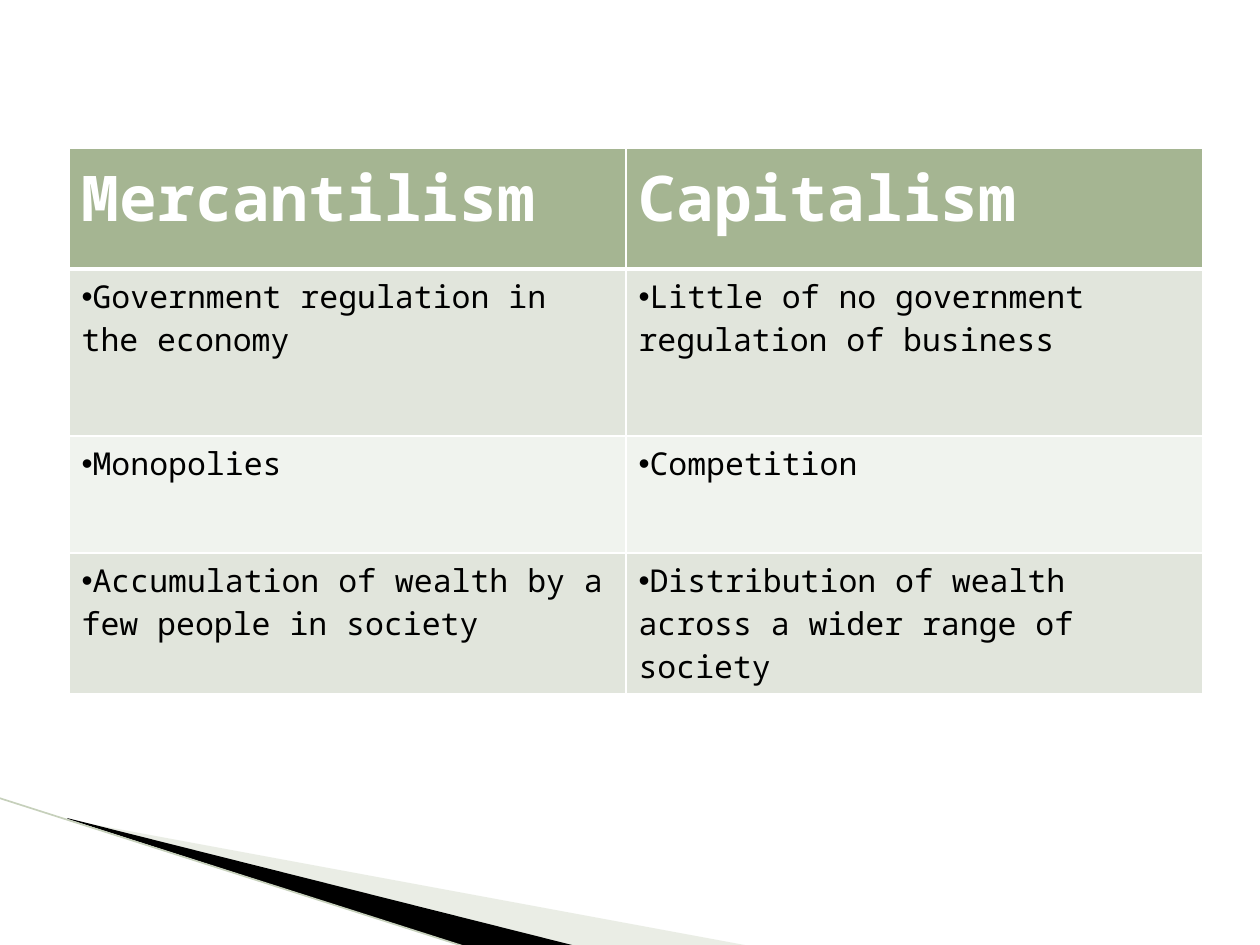
"""Build a slide comparing mercantilism with capitalism in a table."""

from dataclasses import dataclass

from lxml.etree import SubElement
from pptx import Presentation
from pptx.dml.color import RGBColor
from pptx.enum.shapes import MSO_CONNECTOR
from pptx.oxml.ns import qn
from pptx.util import Emu, Pt

EMU_PER_PX = 914400 / 126
FONT = "Noto Sans Mono"
WHITE = RGBColor(0xFF, 0xFF, 0xFF)
BLACK = RGBColor(0x00, 0x00, 0x00)
SAGE = RGBColor(0xA5, 0xB5, 0x92)
DARK_BAND = RGBColor(0xE1, 0xE5, 0xDC)
LIGHT_BAND = RGBColor(0xF0, 0xF3, 0xEE)
PALE_WEDGE = RGBColor(0xCB, 0xD4, 0xC0)
EDGE = RGBColor(0xC6, 0xD0, 0xBB)


@dataclass(frozen=True)
class Wedge:
    points: tuple[tuple[int, int], ...]
    color: RGBColor
    opacity: int = 100


@dataclass(frozen=True)
class Row:
    texts: tuple[str, str]
    height: int
    fill: RGBColor
    is_header: bool = False
    top_border: int = 1
    bottom_border: int = 1


WEDGES = (
    Wedge(((69, 820), (750, 946), (575, 946), (69, 819)), PALE_WEDGE, 40),
    Wedge(((67, 818), (576, 946), (469, 948), (68, 819)), BLACK),
)
COLUMN_WIDTHS = (557, 577)
ROWS = (
    Row(("Mercantilism", "Capitalism"), 121, SAGE, is_header=True, bottom_border=3),
    Row(("Government regulation in the economy",
         "Little of no government regulation of business"), 167, DARK_BAND, top_border=3),
    Row(("Monopolies", "Competition"), 117, LIGHT_BAND),
    Row(("Accumulation of wealth by a few people in society",
         "Distribution of wealth across a wider range of society"), 117, DARK_BAND),
)


def px(length: int) -> Emu:
    """Convert whole pixels to EMU."""
    return Emu(round(length * EMU_PER_PX))


def draw_wedge(slide, wedge: Wedge) -> None:
    """Draw one filled wedge of the corner decoration."""
    start, *rest = wedge.points
    builder = slide.shapes.build_freeform(*start, scale=EMU_PER_PX)
    builder.add_line_segments(rest, close=True)
    outline = builder.convert_to_shape()
    outline.shadow.inherit = False
    outline.line.fill.background()
    outline.fill.solid()
    outline.fill.fore_color.rgb = wedge.color
    if wedge.opacity < 100:
        color = outline.fill._xPr.find(qn("a:solidFill"))[0]
        SubElement(color, qn("a:alpha"), val=str(wedge.opacity * 1000))


def draw_edge(slide) -> None:
    """Draw the thin line along the wedges."""
    edge = slide.shapes.add_connector(
        MSO_CONNECTOR.STRAIGHT, px(-1), px(798), px(469), px(948))
    edge.line.color.rgb = EDGE
    edge.line.width = Pt(0.95)
    SubElement(edge._element.spPr, qn("a:effectLst"))


def set_borders(cell, row: Row) -> None:
    """Give a cell white borders on its four sides."""
    properties = cell._tc.get_or_add_tcPr()
    widths = {"L": 1, "R": 1, "T": row.top_border, "B": row.bottom_border}
    for side, width in widths.items():
        border = SubElement(properties, qn(f"a:ln{side}"), w=str(Pt(width)))
        fill = SubElement(border, qn("a:solidFill"))
        SubElement(fill, qn("a:srgbClr"), val=str(WHITE))


def fill_cell(cell, text: str, row: Row) -> None:
    """Write and format one table cell."""
    set_borders(cell, row)
    cell.fill.solid()
    cell.fill.fore_color.rgb = row.fill
    paragraph = cell.text_frame.paragraphs[0]
    paragraph.text = text
    if not row.is_header:
        properties = paragraph._p.get_or_add_pPr()
        SubElement(properties, qn("a:buFont"), typeface="Arial")
        SubElement(properties, qn("a:buChar"), char="•")
    font = paragraph.runs[0].font
    font.name = FONT
    font.size = Pt(36 if row.is_header else 18)
    font.bold = row.is_header
    font.color.rgb = WHITE if row.is_header else BLACK


def draw_comparison(slide) -> None:
    """Draw the comparison table."""
    comparison = slide.shapes.add_table(
        len(ROWS), len(COLUMN_WIDTHS), px(69), px(148),
        px(sum(COLUMN_WIDTHS)), px(sum(row.height for row in ROWS))).table
    for column, width in zip(comparison.columns, COLUMN_WIDTHS):
        column.width = px(width)
    for table_row, row in zip(comparison.rows, ROWS):
        table_row.height = px(row.height)
        for cell, text in zip(table_row.cells, row.texts):
            fill_cell(cell, text, row)


def main() -> None:
    """Assemble and save the slide."""
    presentation = Presentation()
    presentation.slide_width = px(1260)
    presentation.slide_height = px(945)
    slide = presentation.slides.add_slide(presentation.slide_layouts[6])
    for wedge in WEDGES:
        draw_wedge(slide, wedge)
    draw_edge(slide)
    draw_comparison(slide)
    presentation.save("out.pptx")


if __name__ == "__main__":
    main()
